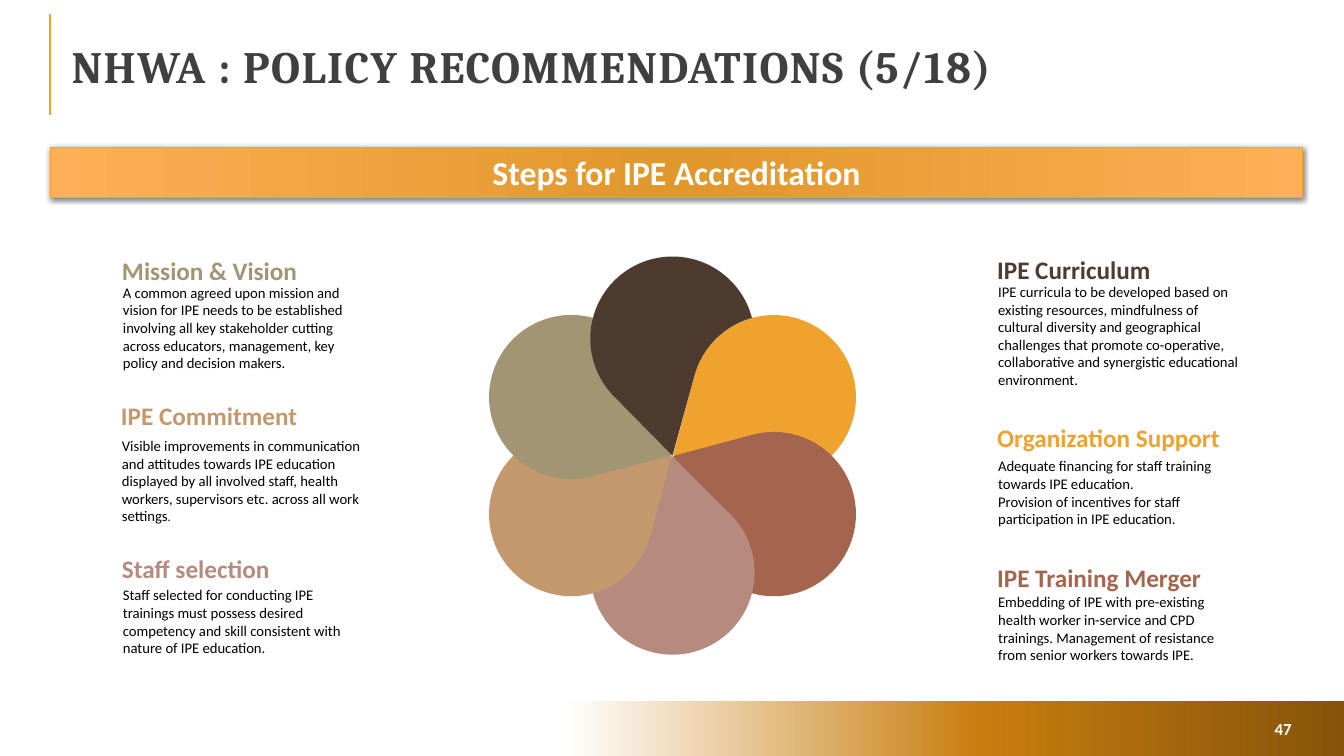
"""Build the slide on the steps for IPE accreditation."""
from math import cos, radians, sin

from lxml.etree import SubElement
from pptx import Presentation
from pptx.dml.color import RGBColor
from pptx.enum.shapes import MSO_CONNECTOR, MSO_SHAPE
from pptx.enum.text import MSO_ANCHOR, MSO_AUTO_SIZE, PP_ALIGN
from pptx.oxml.ns import qn
from pptx.util import Inches, Pt

WHITE = RGBColor(0xFF, 0xFF, 0xFF)
BLACK = RGBColor(0x00, 0x00, 0x00)
CHARCOAL = RGBColor(0x40, 0x40, 0x40)
ORANGE = RGBColor(0xF0, 0xA2, 0x2E)
RUST = RGBColor(0xA5, 0x64, 0x4E)
ROSE = RGBColor(0xB5, 0x8B, 0x80)
TAN = RGBColor(0xC3, 0x98, 0x6D)
OLIVE = RGBColor(0xA1, 0x95, 0x74)
BROWN = RGBColor(0x4E, 0x3B, 0x30)
PEACH = RGBColor(0xFF, 0xAF, 0x57)
AMBER = RGBColor(0xE0, 0x97, 0x2B)
OCHRE = RGBColor(0xC8, 0x7D, 0x0E)
UMBER = RGBColor(0x85, 0x54, 0x0A)


def write(frame, text, size, color, bold=False, align=PP_ALIGN.LEFT,
          font="Calibri", last_font=None, side_inset=0.1):
    frame.word_wrap = True
    frame.auto_size = MSO_AUTO_SIZE.NONE
    frame.vertical_anchor = MSO_ANCHOR.MIDDLE
    frame.margin_left = frame.margin_right = Inches(side_inset)
    for number, line in enumerate(text.split("\n")):
        paragraph = frame.paragraphs[0] if number == 0 else frame.add_paragraph()
        paragraph.alignment = align
        pieces = [(line[:-1], font), (line[-1], last_font)] if last_font else [(line, font)]
        for piece, face in pieces:
            run = paragraph.add_run()
            run.text = piece
            run.font.name = face
            run.font.size = Pt(size)
            run.font.bold = bold
            run.font.color.rgb = color


def shade(shape, stops):
    shape.fill.gradient()
    shape.fill.gradient_angle = 0
    stop_list = shape.fill._xPr.find(qn("a:gradFill")).find(qn("a:gsLst"))
    for stop in list(stop_list):
        stop_list.remove(stop)
    for percent, color in stops:
        stop = SubElement(stop_list, qn("a:gs"), pos=str(percent * 1000))
        SubElement(stop, qn("a:srgbClr"), val=str(color))


deck = Presentation()
deck.slide_width = Inches(13.33)
deck.slide_height = Inches(7.5)
slide = deck.slides.add_slide(deck.slide_layouts[5])
shapes = slide.shapes

title_rule = shapes.add_connector(
    MSO_CONNECTOR.STRAIGHT, Inches(0.5), Inches(1.14), Inches(0.5), Inches(0.14))
title_rule.line.color.rgb = ORANGE
title_rule.line.width = Pt(1.5)
SubElement(title_rule._element.spPr, qn("a:effectLst"))

footer = shapes.add_shape(
    MSO_SHAPE.RECTANGLE, Inches(0), Inches(6.95), Inches(13.33), Inches(0.55))
footer.shadow.inherit = False
footer.line.fill.background()
shade(footer, [(42, WHITE), (73, OCHRE), (100, UMBER)])

title = shapes.title
title.left, title.top = Inches(0.61), Inches(0.28)
title.width, title.height = Inches(12.3), Inches(0.84)
write(title.text_frame, "NHWA : POLICY RECOMMENDATIONS (5/18)", 32, CHARCOAL,
      bold=True, font="Cambria")
title.text_frame.paragraphs[0].line_spacing = 0.8
title.text_frame.paragraphs[0].runs[0].font._element.set("spc", "100")

banner = shapes.add_shape(
    MSO_SHAPE.RECTANGLE, Inches(0.5), Inches(1.46), Inches(12.42), Inches(0.5))
shade(banner, [(0, PEACH), (50, AMBER), (100, PEACH)])
banner.line.color.rgb = ORANGE
banner.line.width = Pt(0.75)
banner.shadow.inherit = False
banner_effects = banner._element.spPr.find(qn("a:effectLst"))
banner_shadow = SubElement(banner_effects, qn("a:outerShdw"), blurRad=str(Pt(4)),
                           dist=str(Pt(1)), dir="5400000", rotWithShape="0")
shadow_color = SubElement(banner_shadow, qn("a:srgbClr"), val=str(BLACK))
SubElement(shadow_color, qn("a:alpha"), val="50000")
write(banner.text_frame, "Steps for IPE Accreditation", 24, WHITE, bold=True,
      align=PP_ALIGN.CENTER)

hub_x, hub_y = 6.67, 4.52
reach, radius = 1.16, 0.815
petal_centers = [(hub_x + reach * cos(radians(60 * step - 90)),
                  hub_y + reach * sin(radians(60 * step - 90))) for step in range(6)]
petal_colors = [BROWN, ORANGE, RUST, ROSE, TAN, OLIVE]
for step in range(1, 6):
    center_x, center_y = petal_centers[step]
    petal = shapes.add_shape(
        MSO_SHAPE.TEAR, Inches(center_x - radius), Inches(center_y - radius),
        Inches(2 * radius), Inches(2 * radius))
    petal.rotation = 135 + 60 * step
    petal.shadow.inherit = False
    petal.fill.solid()
    petal.fill.fore_color.rgb = petal_colors[step]
    petal.line.fill.background()

top_outline = []
for (center_x, center_y), angles in zip(
        petal_centers, [range(135, 346, 3), range(255, 194, -3)]):
    top_outline += [(Inches(center_x + radius * cos(radians(angle))),
                     Inches(center_y + radius * sin(radians(angle)))) for angle in angles]
top_outline.append((Inches(hub_x), Inches(hub_y)))
builder = shapes.build_freeform(*top_outline[0])
builder.add_line_segments(top_outline[1:], close=True)
top_petal = builder.convert_to_shape()
top_petal.shadow.inherit = False
top_petal.fill.solid()
top_petal.fill.fore_color.rgb = petal_colors[0]
top_petal.line.fill.background()

steps = [
    (9.89, 2.47, 2.75, 1.16, BROWN, "IPE Curriculum",
     "IPE curricula to be developed based on existing resources, mindfulness of cultural "
     "diversity and geographical challenges that promote co-operative, collaborative and "
     "synergistic educational environment.", None),
    (9.89, 4.14, 4.48, 0.81, ORANGE, "Organization Support",
     "Adequate financing for staff training towards IPE education.\n"
     "Provision of incentives for staff participation in IPE education.", None),
    (9.89, 5.53, 5.83, 0.81, RUST, "IPE Training Merger",
     "Embedding of IPE with pre-existing health worker in-service and CPD trainings. "
     "Management of resistance from senior workers towards IPE.", None),
    (1.21, 2.48, 2.76, 0.98, OLIVE, "Mission & Vision",
     "A common agreed upon mission and vision for IPE needs to be established involving all "
     "key stakeholder cutting across educators, management, key policy and decision makers.",
     None),
    (1.2, 3.92, 4.28, 0.98, TAN, "IPE Commitment",
     "Visible improvements in communication and attitudes towards IPE education displayed by "
     "all involved staff, health workers, supervisors etc. across all work settings.", "Cabin"),
    (1.21, 5.44, 5.76, 0.81, ROSE, "Staff selection",
     "Staff selected for conducting IPE trainings must possess desired competency and skill "
     "consistent with nature of IPE education.", None),
]
for left, heading_top, detail_top, detail_height, color, heading, detail, last_font in steps:
    heading_box = shapes.add_textbox(
        Inches(left), Inches(heading_top), Inches(2.41), Inches(0.4))
    write(heading_box.text_frame, heading, 18, color, bold=True, side_inset=0)
    detail_box = shapes.add_textbox(
        Inches(left + 0.01), Inches(detail_top), Inches(2.4), Inches(detail_height))
    write(detail_box.text_frame, detail, 10.5, BLACK, last_font=last_font, side_inset=0)

page_number = shapes.add_textbox(Inches(11.85), Inches(7.08), Inches(1.06), Inches(0.3))
write(page_number.text_frame, "47", 12, WHITE, bold=True, align=PP_ALIGN.RIGHT)

deck.save("out.pptx")
